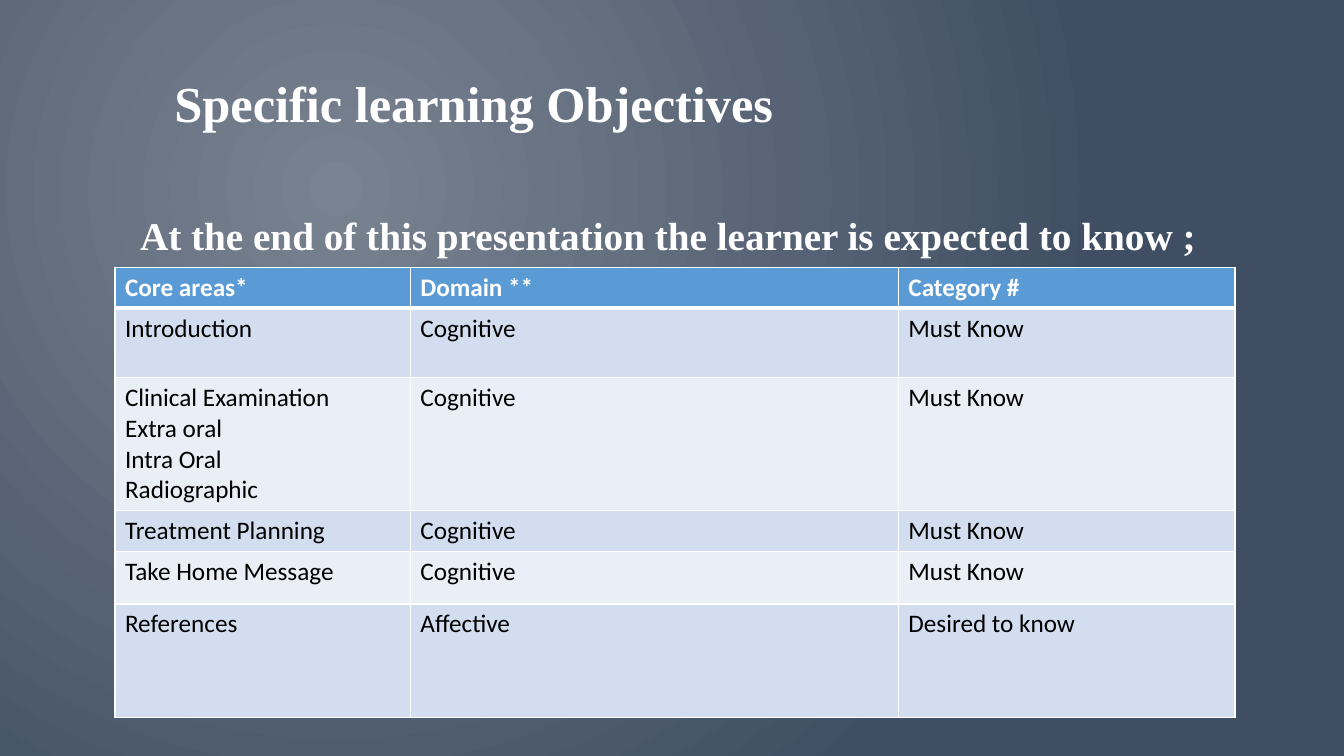
from dataclasses import dataclass

from lxml import etree
from pptx import Presentation
from pptx.dml.color import RGBColor as RGB
from pptx.enum.text import MSO_ANCHOR as ANCHOR, MSO_AUTO_SIZE as AUTO, PP_ALIGN as ALIGN
from pptx.oxml.ns import qn
from pptx.util import Inches, Pt


@dataclass(frozen=True)
class Theme:
    glow: str = "798290"
    dusk: str = "404E63"
    white: str = "FFFFFF"
    black: str = "000000"
    header: str = "5B9BD5"
    bands: tuple = ("D2DEEF", "EAEFF7")
    heading_font: str = "Times New Roman"
    table_font: str = "Calibri"
    title_size: int = 36
    lead_size: int = 28
    table_size: int = 18


THEME = Theme()

COLUMNS = (2.93, 4.84, 3.34)
ROW_HEIGHTS = (0.39, 0.69, 1.27, 0.39, 0.52, 1.13)
OBJECTIVES = (
    ("Core areas*", "Domain **", "Category #"),
    ("Introduction", "Cognitive", "Must Know"),
    ("Clinical Examination\nExtra oral\nIntra Oral\nRadiographic", "Cognitive", "Must Know"),
    ("Treatment Planning", "Cognitive", "Must Know"),
    ("Take Home Message", "Cognitive", "Must Know"),
    ("References", "Affective", "Desired to know"),
)


def add_run(p, text, font, size, color, bold):
    r = p.add_run()
    r.text = text
    r.font.name = font
    r.font.size = Pt(size)
    r.font.bold = bold
    r.font.color.rgb = RGB.from_string(color)


def set_background(slide):
    """Radial gradient centred in the upper left quarter."""
    fill = slide.background.fill
    fill.gradient()
    for stop, color in zip(fill.gradient_stops, (THEME.glow, THEME.dusk)):
        stop.color.rgb = RGB.from_string(color)
    grad = slide.element.find(".//" + qn("a:gradFill"))
    grad.remove(grad.find(qn("a:lin")))
    circle = etree.SubElement(grad, qn("a:path"), path="circle")
    etree.SubElement(circle, qn("a:fillToRect"),
                     l="50000", t="50000", r="100000", b="100000")


def write_heading(sp, box, text, size):
    sp.left, sp.top, sp.width, sp.height = (Inches(v) for v in box)
    tf = sp.text_frame
    tf.word_wrap = True
    tf.auto_size = AUTO.NONE
    tf.vertical_anchor = ANCHOR.TOP
    p = tf.paragraphs[0]
    p.alignment = ALIGN.LEFT
    add_run(p, text, THEME.heading_font, size, THEME.white, True)


def set_borders(cell, bottom):
    props = cell._tc.get_or_add_tcPr()
    widths = {"a:lnL": 1, "a:lnR": 1, "a:lnT": 1, "a:lnB": bottom}
    for i, (tag, width) in enumerate(widths.items()):
        line = etree.Element(qn(tag), w=str(Pt(width)))
        solid = etree.SubElement(line, qn("a:solidFill"))
        etree.SubElement(solid, qn("a:srgbClr"), val=THEME.white)
        props.insert(i, line)


def write_cell(cell, text, is_header, fill):
    cell.fill.solid()
    cell.fill.fore_color.rgb = RGB.from_string(fill)
    set_borders(cell, 3 if is_header else 1)
    tf = cell.text_frame
    color = THEME.white if is_header else THEME.black
    for i, line in enumerate(text.split("\n")):
        p = tf.add_paragraph() if i else tf.paragraphs[0]
        add_run(p, line, THEME.table_font, THEME.table_size, color, is_header)


def add_objectives_table(slide, left, top):
    table = slide.shapes.add_table(
        len(OBJECTIVES), len(COLUMNS), Inches(left), Inches(top),
        Inches(sum(COLUMNS)), Inches(sum(ROW_HEIGHTS))).table
    for column, width in zip(table.columns, COLUMNS):
        column.width = Inches(width)
    for i, (row, height, texts) in enumerate(zip(table.rows, ROW_HEIGHTS, OBJECTIVES)):
        row.height = Inches(height)
        fill = THEME.bands[(i - 1) % 2] if i else THEME.header
        for cell, text in zip(row.cells, texts):
            write_cell(cell, text, i == 0, fill)


def main():
    prs = Presentation()
    prs.slide_width, prs.slide_height = Inches(13.33), Inches(7.5)
    slide = prs.slides.add_slide(prs.slide_layouts[5])
    set_background(slide)

    # Title
    write_heading(slide.shapes.title, (1.63, 0.67, 10.13, 1.21),
                  "Specific learning Objectives", THEME.title_size)

    # Objectives table
    add_objectives_table(slide, 1.14, 2.65)

    # Lead-in above the table
    lead_box = (1.29, 2.05, 10.71, 0.57)
    lead = slide.shapes.add_textbox(*(Inches(v) for v in lead_box))
    write_heading(lead, lead_box,
                  "At the end of this presentation the learner is expected to know ;",
                  THEME.lead_size)

    prs.save("out.pptx")


if __name__ == "__main__":
    main()
